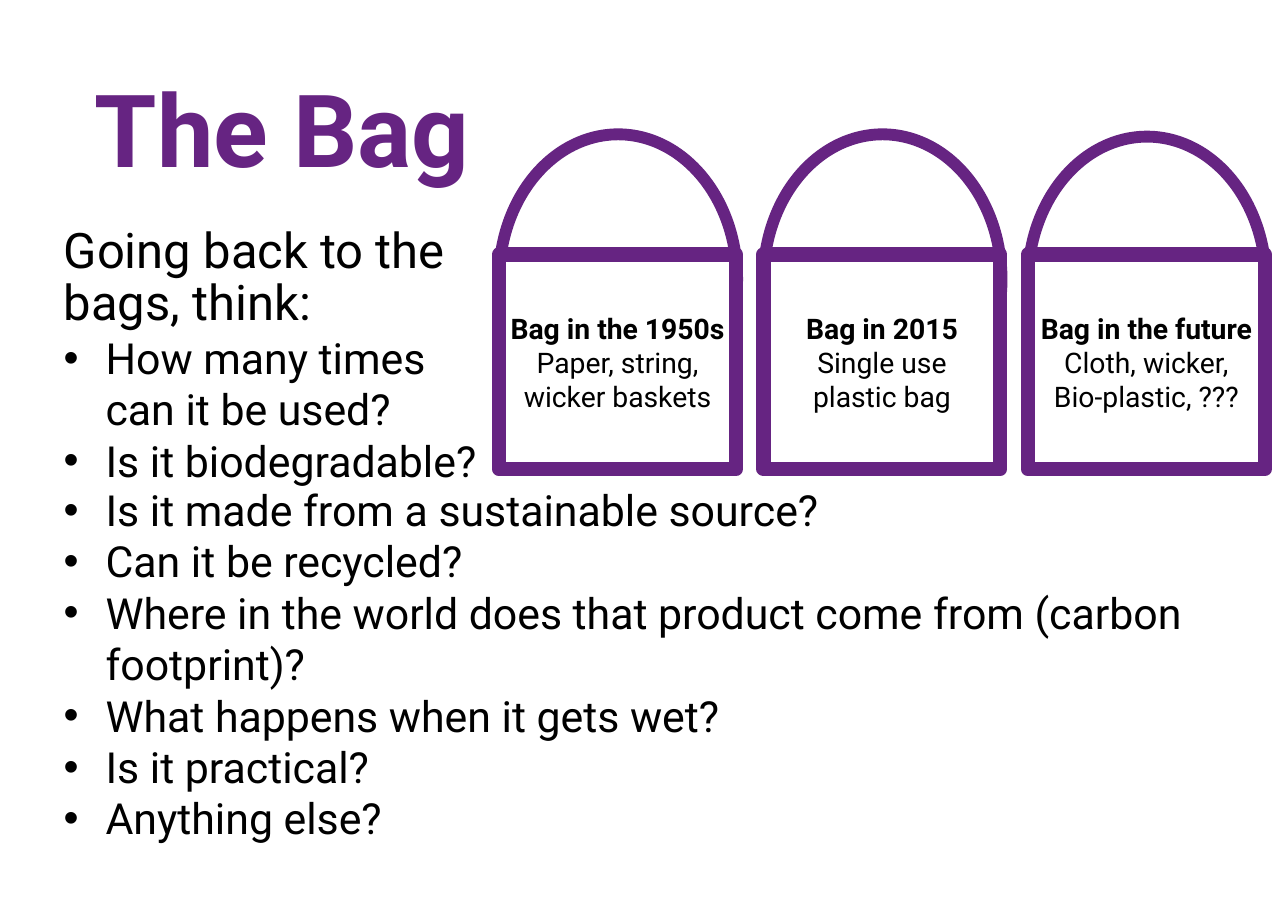
from pptx import Presentation
from pptx.dml.color import RGBColor
from pptx.enum.shapes import MSO_SHAPE
from pptx.enum.text import MSO_ANCHOR, MSO_AUTO_SIZE, PP_ALIGN
from pptx.oxml.ns import qn
from pptx.util import Inches, Pt

PURPLE = RGBColor(0x66, 0x24, 0x82)
BLACK = RGBColor(0x00, 0x00, 0x00)
WHITE = RGBColor(0xFF, 0xFF, 0xFF)
FONT = "Roboto"
WIDTH, HEIGHT = Inches(11.69), Inches(8.27)

# Bag row, in percent of the slide's width or height
BAG_LEFT, BAG_PITCH = 38.75, 20.53
BODY_TOP, BODY_WIDTH, BODY_HEIGHT = 27.93, 18.39, 23.58
HANDLE_WIDTH, HANDLE_HEIGHT = 18.48, 31.8

# Handle top, heading, lines
BAGS = [
    (14.75, "Bag in the 1950s", ["Paper, string, wicker baskets"]),
    (14.75, "Bag in 2015", ["Single use plastic bag"]),
    (15, "Bag in the future", ["Cloth, wicker,", "Bio-plastic, ???"]),
]
INTRO = "Going back to the bags, think:"
QUESTIONS_BESIDE_BAGS = [
    "How many times can it be used?",
    "Is it biodegradable?",
]
QUESTIONS_BELOW_BAGS = [
    "Is it made from a sustainable source?",
    "Can it be recycled?",
    "Where in the world does that product come from (carbon footprint)?",
    "What happens when it gets wet?",
    "Is it practical?",
    "Anything else?",
]


def area(left, top, width, height):
    """Turn percentages of the slide into left, top, width, height."""
    return (int(WIDTH * left / 100), int(HEIGHT * top / 100),
            int(WIDTH * width / 100), int(HEIGHT * height / 100))


def set_font(p, size, color=BLACK, bold=False):
    p.font.name = FONT
    p.font.size = Pt(size)
    p.font.color.rgb = color
    p.font.bold = bold


def next_paragraph(tf):
    """Use the empty first paragraph, then add new ones."""
    return tf.add_paragraph() if tf.text else tf.paragraphs[0]


def add_title(slide, text):
    sp = slide.shapes.title
    sp.left, sp.top, sp.width, sp.height = area(6.5, 10.28, 85.03, 11.12)
    tf = sp.text_frame
    tf.text = text
    tf.auto_size = MSO_AUTO_SIZE.NONE
    tf.vertical_anchor = MSO_ANCHOR.BOTTOM
    p = tf.paragraphs[0]
    p.alignment = PP_ALIGN.LEFT
    p.line_spacing = 0.9
    set_font(p, 66, PURPLE, bold=True)


def add_text_box(slide, box):
    tf = slide.shapes.add_textbox(*area(*box)).text_frame
    tf.word_wrap = True
    return tf


def add_bullets(tf, items):
    for item in items:
        p = next_paragraph(tf)
        p.text = item
        pPr = p._p.get_or_add_pPr()
        pPr.set("marL", str(Inches(0.38)))
        pPr.set("indent", str(-Inches(0.38)))
        bullet_font = pPr.makeelement(qn("a:buFont"), {"typeface": "Arial"})
        bullet = pPr.makeelement(qn("a:buChar"), {"char": "•"})
        pPr.extend([bullet_font, bullet])
        set_font(p, 28)


def add_outlined(slide, kind, box, line_width):
    sp = slide.shapes.add_shape(kind, *area(*box))
    sp.shadow.inherit = False
    sp.line.color.rgb = PURPLE
    sp.line.width = Pt(line_width)
    return sp


def add_bag(slide, left, handle_top, heading, lines):
    # Handle, with its lower half behind the body
    handle_box = (left, handle_top, HANDLE_WIDTH, HANDLE_HEIGHT)
    handle = add_outlined(slide, MSO_SHAPE.OVAL, handle_box, 7.75)
    handle.fill.background()

    # Body with its label
    body_box = (left, BODY_TOP, BODY_WIDTH, BODY_HEIGHT)
    body = add_outlined(slide, MSO_SHAPE.RECTANGLE, body_box, 9.25)
    body.fill.solid()
    body.fill.fore_color.rgb = WHITE
    tf = body.text_frame
    tf.word_wrap = True
    tf.vertical_anchor = MSO_ANCHOR.MIDDLE
    for i, text in enumerate([heading, *lines]):
        p = next_paragraph(tf)
        p.text = text
        p.alignment = PP_ALIGN.CENTER
        set_font(p, 18.5, bold=i == 0)


def main():
    prs = Presentation()
    prs.slide_width, prs.slide_height = WIDTH, HEIGHT
    slide = prs.slides.add_slide(prs.slide_layouts.get_by_name("Title Only"))

    add_title(slide, "The Bag")

    # Introduction and first questions, left of the bags
    tf = add_text_box(slide, (4.11, 24.18, 34.64, 30.96))
    p = next_paragraph(tf)
    p.text = INTRO
    p.line_spacing = 0.9
    set_font(p, 32)
    add_bullets(tf, QUESTIONS_BESIDE_BAGS)

    # Row of bags
    for i, bag in enumerate(BAGS):
        add_bag(slide, BAG_LEFT + i * BAG_PITCH, *bag)

    # Remaining questions across the full width
    tf = add_text_box(slide, (4.11, 52.48, 94.18, 41.11))
    add_bullets(tf, QUESTIONS_BELOW_BAGS)

    prs.save("out.pptx")


if __name__ == "__main__":
    main()
